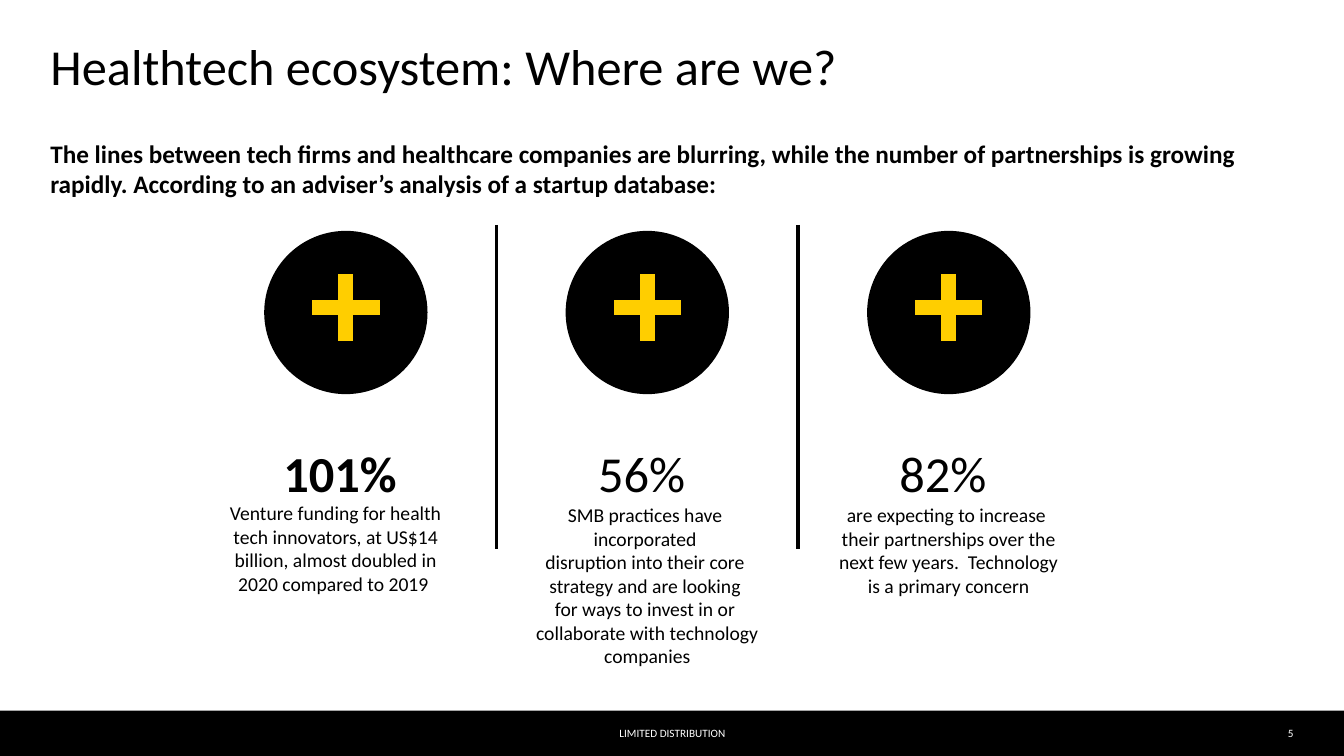
from pptx import Presentation
from pptx.dml.color import RGBColor
from pptx.enum import shapes, text
from pptx.oxml import ns, xmlchemy
from pptx.util import Inches, Pt

FONT = "Calibri"
COLORS = {"black": "000000", "white": "FFFFFF", "gold": "FFCE00"}
MID, PITCH = 6.42, 2.99  # centre of the middle column, column spacing
STATS = [
    ("101% ", True, []),
    ("56% ", False, [
        "SMB practices have ",
        "incorporated ",
        "disruption into their core ",
        "strategy and are looking ",
        "for ways to invest in or ",
        "collaborate with technology",
        "companies",
    ]),
    ("82% ", False, [
        "are expecting to increase ",
        "their partnerships over the",
        "next few years.  Technology",
        "is a primary concern",
    ]),
]
FUNDING = ("Venture funding for health tech innovators, at US$14 billion, "
           "almost doubled in 2020 compared to 2019 ")
LEAD = ("The lines between tech firms and healthcare companies are blurring, "
        "while the number of partnerships is growing rapidly. According to "
        "an adviser’s analysis of a startup database:")
LEFT, CENTER, RIGHT = (text.PP_ALIGN.LEFT, text.PP_ALIGN.CENTER,
                       text.PP_ALIGN.RIGHT)
TOP, MIDDLE = text.MSO_ANCHOR.TOP, text.MSO_ANCHOR.MIDDLE


def rgb(name):
    return RGBColor.from_string(COLORS[name])


def style(para, size, color="black", bold=False, align=LEFT):
    para.alignment = align
    font = para.font
    font.name, font.size, font.bold = FONT, Pt(size), bold
    font.color.rgb = rgb(color)


def frame(shape, anchor=TOP, wrap=True):
    tf = shape.text_frame
    tf.margin_left = tf.margin_right = tf.margin_top = tf.margin_bottom = 0
    tf.vertical_anchor, tf.word_wrap = anchor, wrap
    tf.auto_size = text.MSO_AUTO_SIZE.NONE
    return tf


def add_text(slide, box, lines, anchor=TOP, wrap=True):
    """Each line is (words, keyword settings for style)."""
    tf = frame(slide.shapes.add_textbox(*map(Inches, box)), anchor, wrap)
    for i, (words, look) in enumerate(lines):
        para = tf.add_paragraph() if i else tf.paragraphs[0]
        para.text = words
        style(para, **look)


def add_title(slide, words):
    title = slide.shapes.title
    title.left, title.top = Inches(0.5), Inches(0.42)
    title.width, title.height = Inches(12.33), Inches(0.66)
    para = frame(title).paragraphs[0]
    para.text = words
    para.line_spacing = 0.9
    style(para, 36)


def add_solid(slide, kind, box, color):
    shape = slide.shapes.add_shape(kind, *map(Inches, box))
    shape.shadow.inherit = False
    shape.fill.solid()
    shape.fill.fore_color.rgb = rgb(color)
    shape.line.fill.background()


def add_plus(slide, x, y, arm=0.31, half=0.05):
    corner = [(half, -arm), (half, -half), (arm, -half)]
    points = []
    for _ in range(4):
        points += corner
        corner = [(-dy, dx) for dx, dy in corner]  # quarter turn
    points = [(Inches(x + dx), Inches(y + dy)) for dx, dy in points]
    build = slide.shapes.build_freeform(*points[0])
    build.add_line_segments(points[1:], close=True)
    plus = build.convert_to_shape()
    plus.shadow.inherit = False
    plus.fill.solid()
    plus.fill.fore_color.rgb = plus.line.color.rgb = rgb("gold")
    plus.line.width = Pt(3.5)
    miter = xmlchemy.OxmlElement("a:miter")
    miter.set("lim", "800000")
    plus.line._get_or_add_ln().append(miter)


def add_rule(slide, x):
    rule = slide.shapes.add_connector(
        shapes.MSO_CONNECTOR.STRAIGHT,
        Inches(x), Inches(2.23), Inches(x), Inches(5.45))
    rule.line.color.rgb = rgb("black")
    rule.line.width = Pt(2.5)
    props = rule._element.find(ns.qn("p:spPr"))
    props.append(xmlchemy.OxmlElement("a:effectLst"))


def add_stat(slide, x, figure, bold, lines):
    add_solid(slide, shapes.MSO_SHAPE.OVAL, (x - 0.81, 2.29, 1.62, 1.62),
              "black")
    add_plus(slide, x, 3.05)
    rows = [(figure, dict(size=36, bold=bold, align=CENTER))]
    rows += [(line, dict(size=14, align=CENTER)) for line in lines]
    add_text(slide, (x - 1.2, 4.39, 2.4, 1.3), rows, wrap=False)


def main():
    deck = Presentation()
    deck.slide_width, deck.slide_height = Inches(13.33), Inches(7.5)
    slide = deck.slides.add_slide(deck.slide_layouts[5])

    # Footer bar
    add_solid(slide, shapes.MSO_SHAPE.RECTANGLE, (0, 7.05, 13.33, 0.45),
              "black")
    small = dict(size=8, color="white")
    add_text(slide, (2.17, 7.05, 9, 0.45),
             [("LIMITED DISTRIBUTION", dict(small, align=CENTER))], MIDDLE)
    add_text(slide, (12.38, 7.05, 0.45, 0.45),
             [("5", dict(small, align=RIGHT))], MIDDLE)

    # Title and lead
    add_title(slide, "Healthtech ecosystem: Where are we?")
    add_text(slide, (0.5, 1.37, 12.33, 0.79),
             [(LEAD, dict(size=18, bold=True))])

    # Three figures with rules between them
    for i, stat in enumerate(STATS):
        x = MID + (i - 1) * PITCH
        add_stat(slide, x, *stat)
        if i:
            add_rule(slide, x - PITCH / 2)
    add_text(slide, (2.13, 4.97, 2.4, 1.18),
             [(FUNDING, dict(size=14, align=CENTER))])

    deck.save("out.pptx")


if __name__ == "__main__":
    main()
